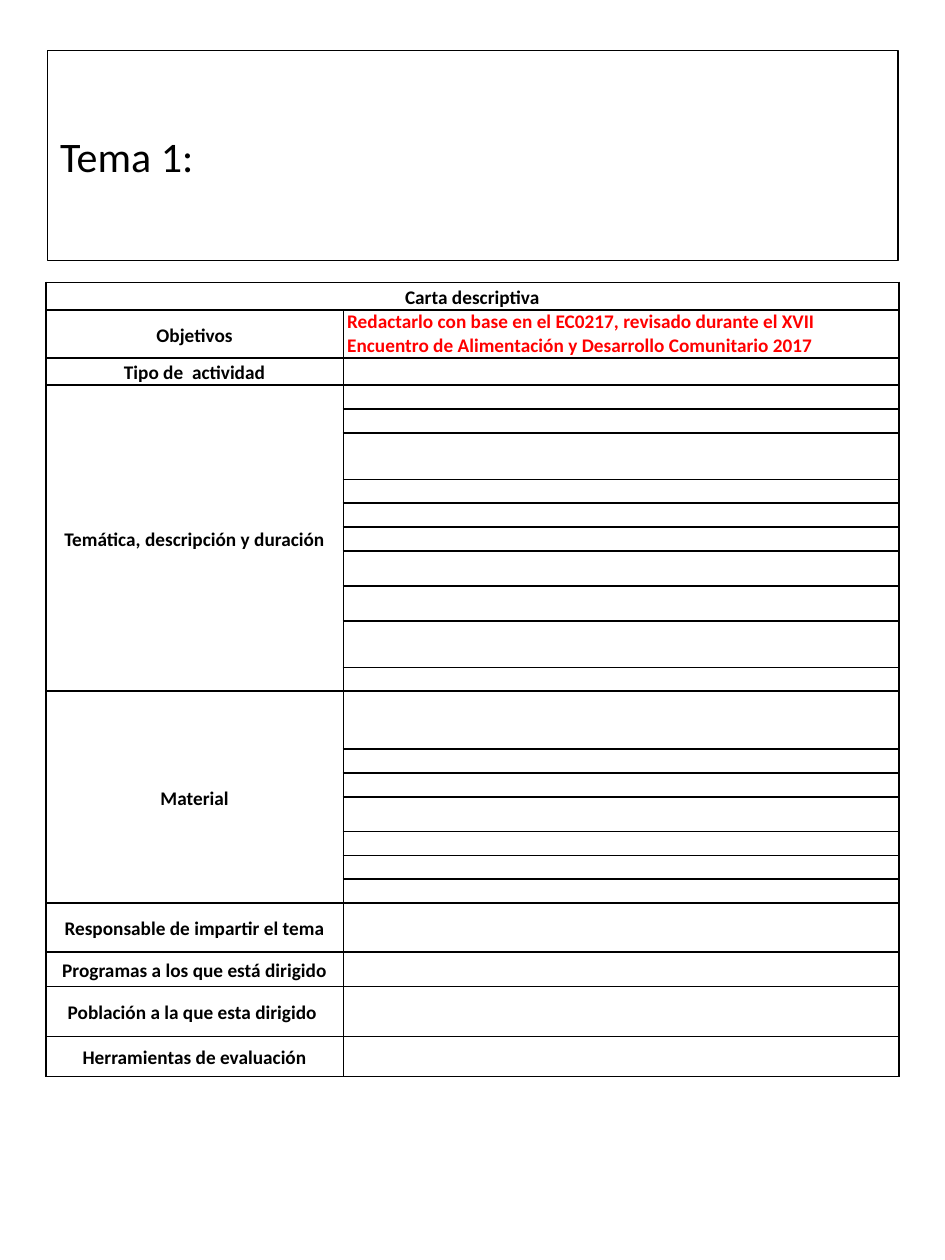
from lxml import etree
from pptx import Presentation
from pptx import util as u
from pptx.dml import color
from pptx.enum import shapes, text
from pptx.oxml import ns

Pt = u.Pt
BLACK, RED = "000000", "FF0000"
LEFT, CENTER = text.PP_ALIGN.LEFT, text.PP_ALIGN.CENTER


def rgb(hex_color):
    return color.RGBColor.from_string(hex_color)


def write(frame, words, size, hex_color=BLACK, bold=False, align=LEFT, spacing=1.0):
    paragraph = frame.paragraphs[0]
    paragraph.alignment, paragraph.line_spacing = align, spacing
    run = paragraph.add_run()
    run.text = words
    for name, value in {"name": "Calibri", "size": Pt(size), "bold": bold}.items():
        setattr(run.font, name, value)
    run.font.color.rgb = rgb(hex_color)


deck = Presentation()
deck.slide_width, deck.slide_height = Pt(540), Pt(720)
slide = deck.slides.add_slide(deck.slide_layouts[6])

# Topic heading
topic = slide.shapes.add_shape(shapes.MSO_SHAPE.RECTANGLE, Pt(27.2), Pt(28.8), Pt(486), Pt(120.2))
topic.shadow.inherit = False
topic.fill.background()
topic.line.color.rgb = rgb(BLACK)
topic.line.width = Pt(0.75)
topic.text_frame.vertical_anchor = text.MSO_ANCHOR.MIDDLE
write(topic.text_frame, "Tema 1:", 24)

# Sections of the chart: label and the heights of the rows it spans
LINE = 13.6
sections = [
    ("Carta descriptiva", [16]),
    ("Objetivos", [27]),
    ("Tipo de  actividad", [15.7]),
    ("Temática, descripción y duración",
     [LINE, LINE, 26.6, LINE, LINE, LINE, 20, 20, 26.6, LINE]),
    ("Material", [33.2, LINE, LINE, 19.8, LINE, LINE, LINE]),
    ("Responsable de impartir el tema", [28.1]),
    ("Programas a los que está dirigido", [19.7]),
    ("Población a la que esta dirigido ", [28.6]),
    ("Herramientas de evaluación", [22.9]),
]
heights = [height for _, spans in sections for height in spans]
widths = [170, 317.4]

chart = slide.shapes.add_table(len(heights), len(widths), Pt(26.2), Pt(161.3),
                               Pt(sum(widths)), Pt(sum(heights))).table
chart.first_row = chart.horz_banding = False
for column, width in zip(chart.columns, widths):
    column.width = Pt(width)
for row, height in zip(chart.rows, heights):
    row.height = Pt(height)

cell_format = {
    "margin_left": Pt(2.2), "margin_right": Pt(2.2),
    "margin_top": 0, "margin_bottom": 0,
    "vertical_anchor": text.MSO_ANCHOR.MIDDLE,
}
for cell in chart.iter_cells():
    for name, value in cell_format.items():
        setattr(cell, name, value)
    properties = cell._tc.get_or_add_tcPr()
    for side in ("lnL", "lnR", "lnT", "lnB"):
        border = etree.SubElement(properties, ns.qn(f"a:{side}"), w=str(Pt(1)))
        solid = etree.SubElement(border, ns.qn("a:solidFill"))
        etree.SubElement(solid, ns.qn("a:srgbClr"), val=BLACK)
    cell.fill.background()
    # Empty cells need the text size too, or their rows grow
    etree.SubElement(cell.text_frame.paragraphs[0]._p, ns.qn("a:endParaRPr"), sz="1100")

chart.cell(0, 0).merge(chart.cell(0, 1))
chart.cell(0, 0).vertical_anchor = text.MSO_ANCHOR.TOP
first = 0
for label, spans in sections:
    last = first + len(spans) - 1
    if last > first:
        chart.cell(first, 0).merge(chart.cell(last, 0))
    write(chart.cell(first, 0).text_frame, label, 11, bold=True, align=CENTER, spacing=1.15)
    first = last + 1

write(chart.cell(1, 1).text_frame,
      "Redactarlo con base en el EC0217, revisado durante el XVII "
      "Encuentro de Alimentación y Desarrollo Comunitario 2017",
      11, RED, bold=True)

deck.save("out.pptx")
